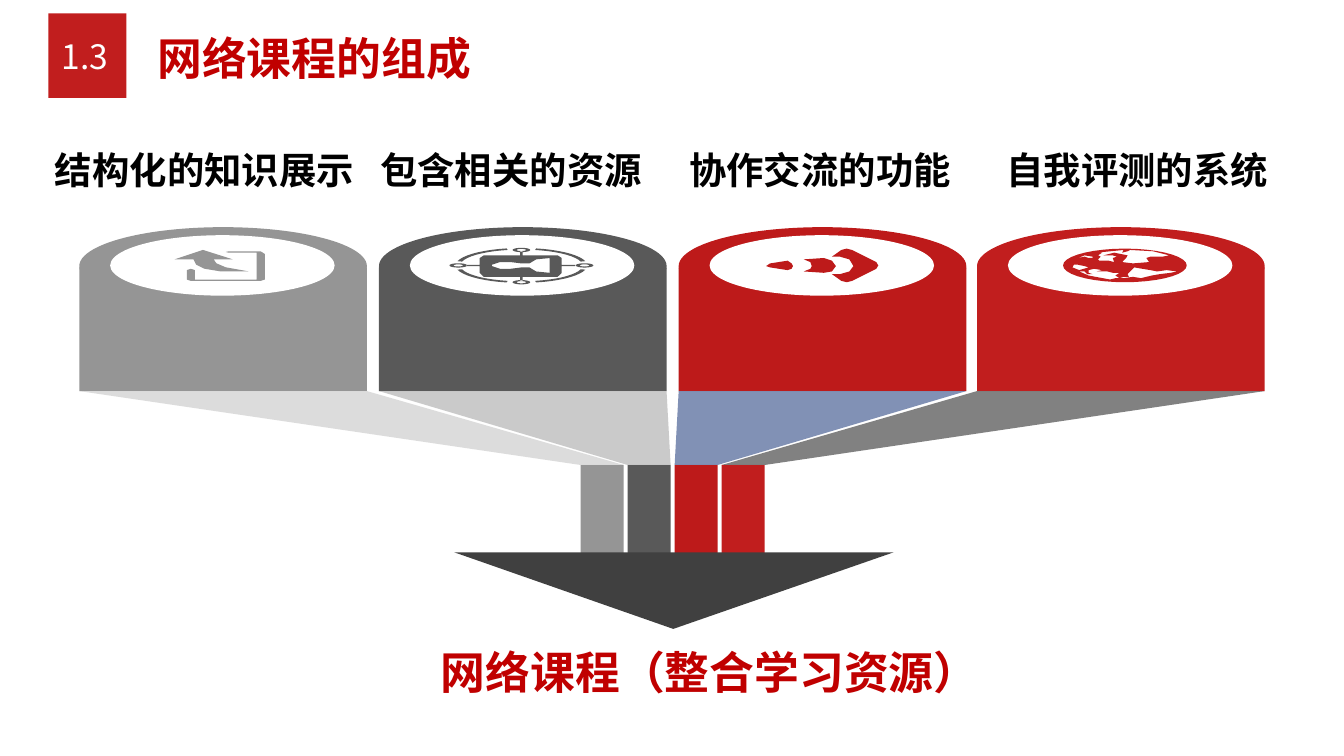
import math
from lxml import etree
from pptx import Presentation
from pptx import util as u
from pptx.dml.color import RGBColor
from pptx.enum import shapes, text
from pptx.oxml import ns

PX = 9144
FONT = "Noto Sans CJK SC"
WHITE = RGBColor(0xFF, 0xFF, 0xFF)
BLACK = RGBColor(0x00, 0x00, 0x00)
TITLE_RED = RGBColor(0xC0, 0x00, 0x00)
RED = RGBColor(0xC1, 0x1E, 0x1E)
DEEP_RED = RGBColor(0xBD, 0x1A, 0x1A)
DARK = RGBColor(0x59, 0x59, 0x59)
GREY = RGBColor(0x95, 0x95, 0x95)
ARROW = RGBColor(0x40, 0x40, 0x40)
FAN_GREY = RGBColor(0xD5, 0xD5, 0xD5)
FAN_SILVER = RGBColor(0xBF, 0xBF, 0xBF)
FAN_BLUE = RGBColor(0x66, 0x79, 0xA5)
FAN_DARK = RGBColor(0x66, 0x66, 0x66)

deck = Presentation()
deck.slide_width = 1000 * PX
deck.slide_height = deck.slide_width * 9 // 16
page = deck.slides.add_slide(deck.slide_layouts[5])


def paint(shape, color):
    shape.shadow.inherit = False
    shape.fill.solid()
    shape.fill.fore_color.rgb = color
    shape.line.fill.background()
    return shape


def outline(contours, color):
    scaled = [[(x * PX, y * PX) for x, y in contour] for contour in contours]
    builder = page.shapes.build_freeform(*scaled[0][0])
    builder.add_line_segments(scaled[0][1:])
    for contour in scaled[1:]:
        builder.move_to(*contour[0])
        builder.add_line_segments(contour[1:])
    return paint(builder.convert_to_shape(), color)


columns = [
    (59, GREY, FAN_GREY),
    (282, DARK, FAN_SILVER),
    (505, DEEP_RED, FAN_BLUE),
    (727, RED, FAN_DARK),
]
RECT, OVAL = shapes.MSO_SHAPE.RECTANGLE, shapes.MSO_SHAPE.OVAL
for index, (left, color, fan_color) in reversed(list(enumerate(columns))):
    stem = 432 + 35 * index
    for kind, x, y, width, height, tint in [
        (RECT, left, 199, 214, 92, color),
        (RECT, stem, 346, 32, 70, color),
        (OVAL, left, 169, 214, 58, color),
        (OVAL, left + 23, 175, 167, 45, WHITE),
    ]:
        paint(page.shapes.add_shape(kind, x * PX, y * PX, width * PX, height * PX), tint)
    fan = outline([[(left, 291), (left + 214, 291), (stem + 32, 346), (stem, 346), (left, 291)]], fan_color)
    fan_fill = fan.fill._xPr.find(".//" + ns.qn("a:srgbClr"))
    etree.SubElement(fan_fill, ns.qn("a:alpha"), val="82000")

outline([[(338, 411), (665, 411), (501, 468), (338, 411)]], ARROW)

turn = [math.radians(10 * step) for step in range(37)]
network = [
    [(357, 192), (360, 190), (415, 190), (418, 192), (418, 203), (415, 206), (360, 206), (357, 203), (357, 192)],
    [(409, 192), (399, 193), (394, 196), (388, 196), (380, 195), (372, 195), (366, 197), (366, 198),
     (372, 200), (380, 200), (388, 199), (394, 199), (399, 202), (409, 203), (409, 192)],
]
for x, y in [(388, 186), (388, 210), (341, 197.5), (435, 197.5)]:
    for rx, ry in [(6.5, 1.6), (3.5, 0.8)]:
        network.append([(x + rx * math.cos(a), y + ry * math.sin(a)) for a in turn])
for x1, y1, x2, y2 in [(387, 187, 389, 190), (387, 206, 389, 209), (347, 197, 357, 198), (418, 197, 428, 198)]:
    network.append([(x1, y1), (x2, y1), (x2, y2), (x1, y2), (x1, y1)])
for start in (14, 103, 194, 283):
    sweep = [math.radians(start + 7 * step) for step in range(10)]
    band = [(388 + 49 * math.cos(a), 197.5 + 13 * math.sin(a)) for a in sweep]
    band += [(388 + 45.5 * math.cos(a), 197.5 + 11.8 * math.sin(a)) for a in reversed(sweep)]
    network.append(band + band[:1])
outline(network, DARK)

globe = [
    [(837 + 46 * math.cos(a), 197.5 + 12.5 * math.sin(a)) for a in turn],
    [(810, 192), (807, 191), (802, 192), (807, 190), (813, 191), (813, 192), (810, 192)],
    [(802, 197), (807, 198), (810, 199), (803, 201), (798, 199), (799, 197), (802, 197)],
    [(850, 200), (856, 201), (861, 202), (868, 201), (876, 202), (871, 203), (863, 204), (857, 205),
     (849, 207), (843, 206), (836, 207), (830, 207), (826, 208), (810, 205), (803, 202), (807, 202),
     (809, 204), (813, 204), (810, 203), (810, 201), (814, 200), (820, 201), (816, 202), (824, 202),
     (828, 203), (833, 203), (830, 205), (833, 207), (836, 206), (840, 206), (839, 204), (842, 201),
     (844, 199), (850, 200)],
    [(839, 187), (841, 186), (858, 187), (870, 190), (865, 191), (856, 191), (853, 192), (855, 195),
     (843, 196), (835, 195), (838, 192), (839, 190), (834, 189), (829, 188), (821, 190), (828, 190),
     (831, 191), (828, 192), (829, 195), (825, 194), (818, 194), (817, 193), (819, 191), (817, 190),
     (820, 188), (816, 188), (836, 186), (835, 188), (839, 187)],
]
outline(globe, RED)

outline([
    [(197, 189), (197, 208), (194, 209), (142, 209), (139, 208), (139, 201), (142, 200), (145, 201),
     (145, 208), (191, 208), (191, 188), (170, 188), (168, 187.5), (170, 187), (194, 187), (197, 189)],
], GREY)
outline([
    [(151, 186), (173, 193), (159, 193), (161, 196), (168, 199), (185, 202), (164, 202), (152, 200),
     (146, 197), (144, 193), (130, 193), (151, 186)],
], GREY)
outline([
    [(626, 186), (619, 191), (625, 191), (632, 193), (635, 198), (632, 202), (625, 204), (619, 204),
     (626, 209), (630, 210), (634, 209), (652, 200), (653.5, 197.5), (652, 195), (634, 186), (630, 185), (626, 186)],
    [(590, 198), (589, 196), (586, 194), (573, 196), (570, 198), (573, 199), (586, 201), (589, 200), (590, 198)],
    [(622, 198), (619, 194), (613, 192), (598, 193), (603, 195), (604, 198), (603, 200), (598, 202),
     (613, 203), (619, 202), (622, 198)],
], DEEP_RED)

badge = paint(page.shapes.add_shape(RECT, 36 * PX, 10 * PX, 58 * PX, 63 * PX), RED)
title = page.shapes.title
title.left, title.top, title.width, title.height = 107 * PX, 18 * PX, 730 * PX, 50 * PX
LEFT, CENTER = text.PP_ALIGN.LEFT, text.PP_ALIGN.CENTER
labels = [
    (badge, "1.3", 18, False, FONT, WHITE, LEFT),
    (title, "网络课程的组成", 24, True, FONT, TITLE_RED, LEFT),
]
for x, y, width, height, words, size, font, color, align in [
    (31, 104, 252, 44, "结构化的知识展示", 20, FONT, BLACK, LEFT),
    (273, 104, 220, 44, "包含相关的资源", 20, FONT, BLACK, LEFT),
    (503, 104, 224, 44, "协作交流的功能", 20, FONT, BLACK, LEFT),
    (739, 104, 254, 44, "自我评测的系统", 20, FONT, BLACK, LEFT),
    (154, 474, 748, 51, "网络课程（整合学习资源）", 24, "Arial", TITLE_RED, CENTER),
]:
    box = page.shapes.add_textbox(x * PX, y * PX, width * PX, height * PX)
    labels.append((box, words, size, True, font, color, align))

for shape, words, size, bold, font, color, align in labels:
    frame = shape.text_frame
    frame.word_wrap = True
    frame.auto_size = text.MSO_AUTO_SIZE.NONE
    frame.vertical_anchor = text.MSO_ANCHOR.MIDDLE
    para = frame.paragraphs[0]
    para.text = words
    para.alignment = align
    para.font.size = u.Pt(size)
    para.font.bold = bold
    para.font.name = font
    para.font.color.rgb = color
    east_asian = etree.SubElement(para.font._element, ns.qn("a:ea"))
    east_asian.set("typeface", FONT)

deck.save("out.pptx")
